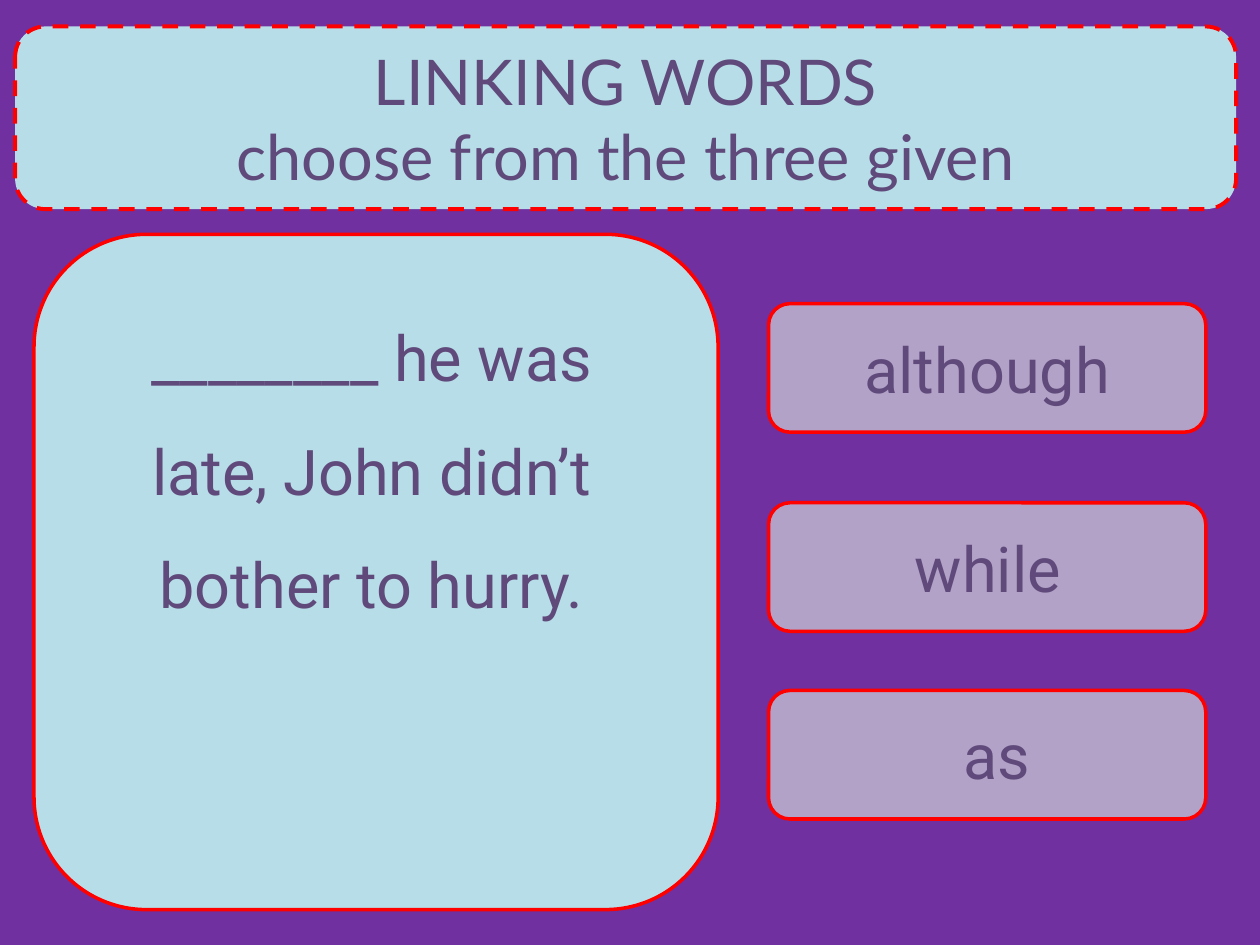
import pptx
import pptx.dml.color
import pptx.enum.dml
import pptx.enum.shapes
import pptx.enum.text
import pptx.util
from pptx.util import Inches

RGBColor = pptx.dml.color.RGBColor
PURPLE = RGBColor(0x70, 0x30, 0xA0)
PALE_BLUE = RGBColor(0xB7, 0xDE, 0xE8)
LILAC = RGBColor(0xB3, 0xA2, 0xC7)
RED = RGBColor(0xFF, 0x00, 0x00)
TEXT_PURPLE = RGBColor(0x60, 0x4A, 0x7B)

CHOICE_LEFT, CHOICE_WIDTH, CHOICE_HEIGHT = 6.1, 3.47, 1.02
LABEL_HEIGHT, LABEL_DROP = 0.71, 0.16
# Word, top of its panel, left and width of its label
CHOICES = [
    ("although", 2.41, 6.1, 3.47),
    ("while", 3.99, 6.5, 2.68),
    ("as", 5.48, 6.57, 2.68),
]


def add_panel(slide, left, top, width, height, fill, line_width=2):
    """Add a rounded panel with a red outline."""
    panel = slide.shapes.add_shape(
        pptx.enum.shapes.MSO_SHAPE.ROUNDED_RECTANGLE,
        Inches(left), Inches(top), Inches(width), Inches(height))
    panel.shadow.inherit = False
    panel.fill.solid()
    panel.fill.fore_color.rgb = fill
    panel.line.color.rgb = RED
    panel.line.width = pptx.util.Pt(line_width)
    return panel


def write_lines(frame, lines, font_name, line_spacing=None):
    """Fill a text frame with centred paragraphs."""
    frame.word_wrap = True
    frame.text = "\n".join(lines)
    for paragraph in frame.paragraphs:
        paragraph.alignment = pptx.enum.text.PP_ALIGN.CENTER
        paragraph.line_spacing = line_spacing
        paragraph.font.name = font_name
        paragraph.font.size = pptx.util.Pt(36)
        paragraph.font.color.rgb = TEXT_PURPLE


def add_label(slide, left, top, width, height, text, line_spacing=None):
    label = slide.shapes.add_textbox(
        Inches(left), Inches(top), Inches(width), Inches(height))
    write_lines(label.text_frame, [text], "Roboto", line_spacing)


def add_title(slide):
    title = add_panel(slide, 0.12, 0.21, 9.69, 1.45, PALE_BLUE, 2.25)
    title.line.dash_style = pptx.enum.dml.MSO_LINE.DASH
    write_lines(title.text_frame,
                ["LINKING WORDS", "choose from the three given"], "Lato")


def add_question(slide):
    add_panel(slide, 0.27, 1.86, 5.43, 5.36, PALE_BLUE)
    add_label(slide, 0.59, 2.18, 4.72, 4.64,
              "________ he was late, John didn’t bother to hurry.", 1.5)


def add_choices(slide):
    for word, top, label_left, label_width in CHOICES:
        add_panel(slide, CHOICE_LEFT, top, CHOICE_WIDTH, CHOICE_HEIGHT, LILAC)
        add_label(slide, label_left, top + LABEL_DROP, label_width,
                  LABEL_HEIGHT, word)


def main():
    deck = pptx.Presentation()
    deck.slide_width, deck.slide_height = Inches(10), Inches(7.5)
    slide = deck.slides.add_slide(deck.slide_layouts[6])
    slide.background.fill.solid()
    slide.background.fill.fore_color.rgb = PURPLE
    add_question(slide)
    add_choices(slide)
    add_title(slide)
    deck.save("out.pptx")


if __name__ == "__main__":
    main()
